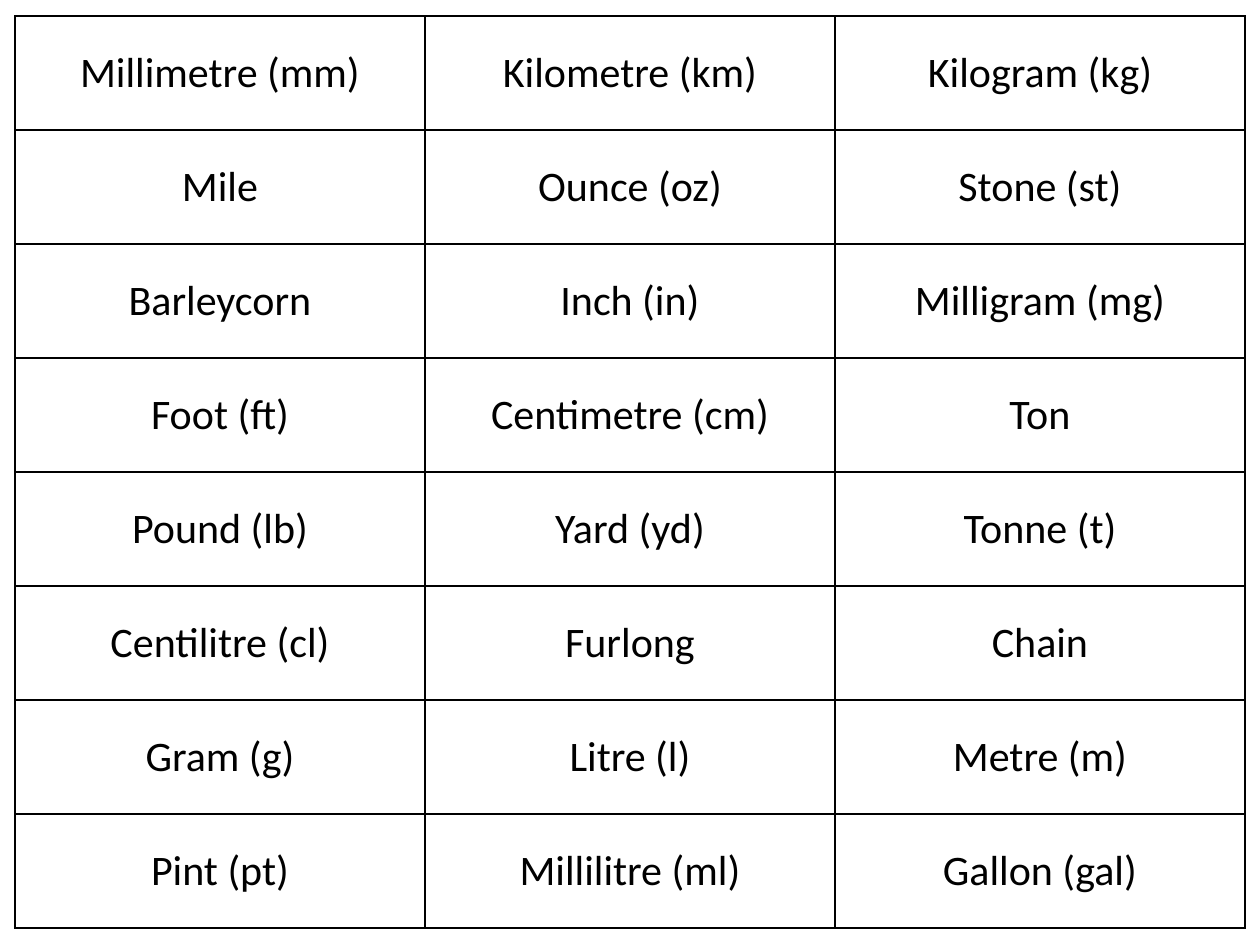
from dataclasses import dataclass

from pptx import Presentation
from pptx.dml.color import RGBColor
from pptx.enum.text import MSO_ANCHOR as Anchor, PP_ALIGN as Align
from pptx.oxml import parse_xml
from pptx.oxml.ns import nsdecls
from pptx.util import Emu, Pt

PX_PER_INCH = 126
COLOURS = {"ink": "000000", "paper": "FFFFFF"}
FONT_FORMAT = {"name": "Calibri", "size": Pt(24), "bold": False}
BORDER_WIDTH = Pt(1)


@dataclass(frozen=True)
class UnitGrid:
    left: int
    top: int
    column_width: int
    row_height: int
    rows: tuple[tuple[str, ...], ...]


UNITS = UnitGrid(15, 16, 410, 114, (
    ("Millimetre (mm)", "Kilometre (km)", "Kilogram (kg)"),
    ("Mile", "Ounce (oz)", "Stone (st)"),
    ("Barleycorn", "Inch (in)", "Milligram (mg)"),
    ("Foot (ft)", "Centimetre (cm)", "Ton"),
    ("Pound (lb)", "Yard (yd)", "Tonne (t)"),
    ("Centilitre (cl)", "Furlong", "Chain"),
    ("Gram (g)", "Litre (l)", "Metre (m)"),
    ("Pint (pt)", "Millilitre (ml)", "Gallon (gal)"),
))


def px(length: int) -> Emu:
    return Emu(round(length * 914400 / PX_PER_INCH))


def add_borders(cell) -> None:
    properties = cell._tc.get_or_add_tcPr()
    for position, side in enumerate(("lnL", "lnR", "lnT", "lnB")):
        properties.insert(position, parse_xml(
            f'<a:{side} {nsdecls("a")} w="{BORDER_WIDTH}"><a:solidFill>'
            f'<a:srgbClr val="{COLOURS["ink"]}"/></a:solidFill></a:{side}>'
        ))


def write_unit(cell, unit: str) -> None:
    cell.text = unit
    cell.vertical_anchor = Anchor.MIDDLE
    cell.fill.solid()
    cell.fill.fore_color.rgb = RGBColor.from_string(COLOURS["paper"])
    label = cell.text_frame.paragraphs[0]
    label.alignment = Align.CENTER
    font = label.runs[0].font
    for attribute, value in FONT_FORMAT.items():
        setattr(font, attribute, value)
    font.color.rgb = RGBColor.from_string(COLOURS["ink"])
    add_borders(cell)


def draw_grid(slide, grid: UnitGrid) -> None:
    row_count, column_count = len(grid.rows), len(grid.rows[0])
    units = slide.shapes.add_table(
        row_count, column_count, px(grid.left), px(grid.top),
        px(grid.column_width * column_count), px(grid.row_height * row_count),
    ).table
    units.first_row = units.horz_banding = False
    for column in units.columns:
        column.width = px(grid.column_width)
    for row, names in zip(units.rows, grid.rows):
        row.height = px(grid.row_height)
        for cell, name in zip(row.cells, names):
            write_unit(cell, name)


def main() -> None:
    deck = Presentation()
    deck.slide_width, deck.slide_height = px(1260), px(945)
    draw_grid(deck.slides.add_slide(deck.slide_layouts[6]), UNITS)
    deck.save("out.pptx")


if __name__ == "__main__":
    main()
